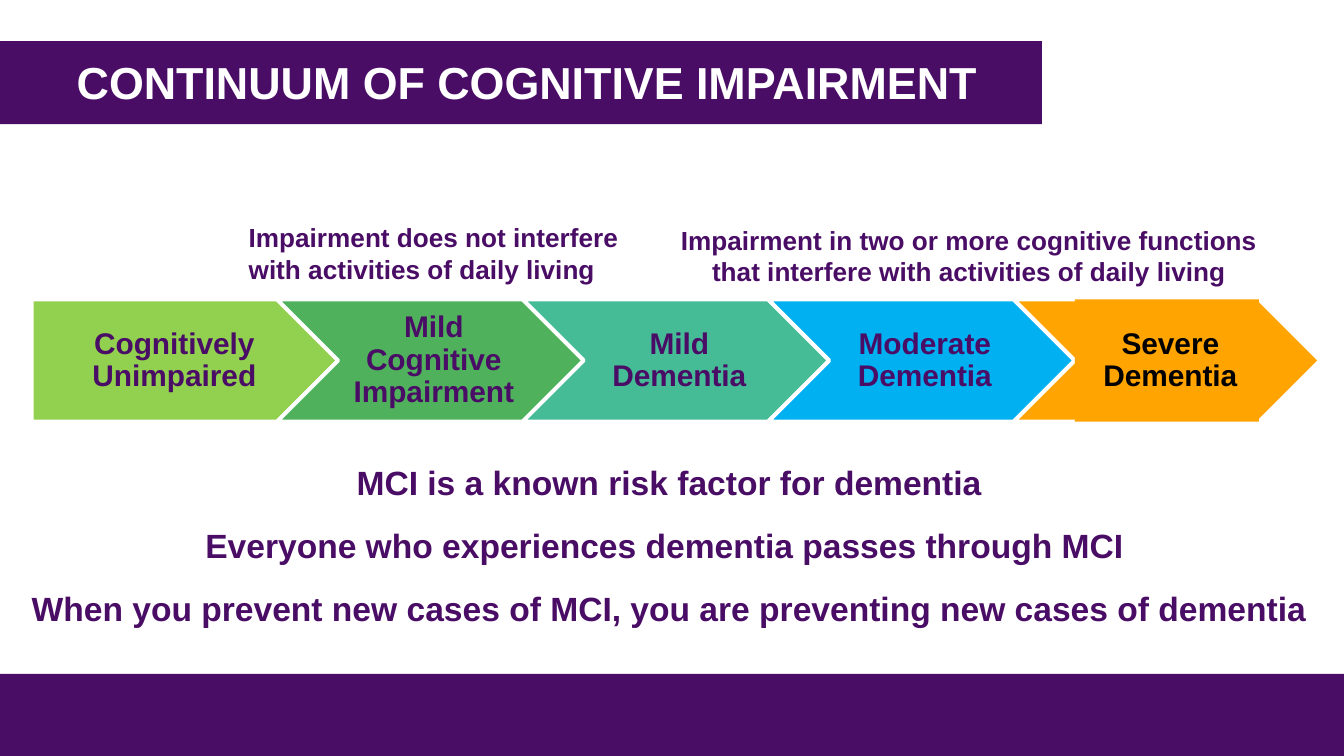
from pptx import Presentation
from pptx.dml.color import RGBColor
from pptx.enum import shapes, text
from pptx.util import Cm, Pt

PURPLE = RGBColor(0x4A, 0x0D, 0x66)
WHITE = RGBColor(0xFF, 0xFF, 0xFF)
BLACK = RGBColor(0x00, 0x00, 0x00)
LIME = RGBColor(0x92, 0xD0, 0x50)
GREEN = RGBColor(0x4F, 0xB1, 0x5B)
TEAL = RGBColor(0x45, 0xBB, 0x96)
BLUE = RGBColor(0x00, 0xB0, 0xF0)
ORANGE = RGBColor(0xFF, 0xA4, 0x00)

STAGES = [
    ("Cognitively Unimpaired", LIME),
    ("Mild Cognitive Impairment", GREEN),
    ("Mild Dementia", TEAL),
    ("Moderate Dementia", BLUE),
    ("Severe Dementia", ORANGE),
]
MESSAGES = [
    "MCI is a known risk factor for dementia",
    "Everyone who experiences dementia passes through MCI ",
    "When you prevent new cases of MCI, you are preventing new cases of dementia",
]

# Stage geometry, in centimetres
STAGE_LEFT, STAGE_TOP, STAGE_STEP = 0.6, 5.66, 4.64
STAGE_WIDTH, STAGE_HEIGHT = 5.79, 2.31
POINT = STAGE_HEIGHT / 2


def add_block(slide, kind, box, fill, outline=None):
    """Add a filled preset shape, with an outline only when a colour is given."""
    block = slide.shapes.add_shape(kind, *map(Cm, box))
    block.shadow.inherit = False
    block.fill.solid()
    block.fill.fore_color.rgb = fill
    if outline is None:
        block.line.fill.background()
    else:
        block.line.color.rgb = outline
        block.line.width = Pt(2)
    return block


def add_text(slide, box, lines, *, size, color=PURPLE, align=text.PP_ALIGN.CENTER,
             anchor=text.MSO_ANCHOR.TOP, insets=(0.25, 0.13, 0.25, 0.13),
             line_spacing=None, gap=0, fill=None):
    """Add a wrapped box of bold text with one paragraph per line."""
    label = slide.shapes.add_textbox(*map(Cm, box))
    if fill is not None:
        label.fill.solid()
        label.fill.fore_color.rgb = fill
    frame = label.text_frame
    frame.word_wrap = True
    frame.vertical_anchor = anchor
    (frame.margin_left, frame.margin_top,
     frame.margin_right, frame.margin_bottom) = map(Cm, insets)
    for index, line in enumerate(lines):
        paragraph = frame.add_paragraph() if index else frame.paragraphs[0]
        paragraph.alignment = align
        if line_spacing:
            paragraph.line_spacing = line_spacing
        if index and gap:
            paragraph.space_before = Pt(gap)
        run = paragraph.add_run()
        run.text = line
        run.font.name = "Arial"
        run.font.size = Pt(size)
        run.font.bold = True
        run.font.color.rgb = color


def add_stage(slide, index, name, fill):
    """Add one arrow of the continuum with its label."""
    first, last = index == 0, index == len(STAGES) - 1
    left = STAGE_LEFT + index * STAGE_STEP
    kind = shapes.MSO_SHAPE.PENTAGON if first else shapes.MSO_SHAPE.CHEVRON
    add_block(slide, kind, (left, STAGE_TOP, STAGE_WIDTH, STAGE_HEIGHT), fill, WHITE)

    # The label fills the flat part of the arrow
    label_left = left if first else left + POINT
    label_width = STAGE_WIDTH - (POINT / 2 if first else 2 * POINT)
    add_text(slide, (label_left, STAGE_TOP, label_width, STAGE_HEIGHT), [name],
             size=16, color=BLACK if last else PURPLE,
             anchor=text.MSO_ANCHOR.MIDDLE, line_spacing=0.9,
             insets=(0.23 if first else 0.18, 0.13, 0.05, 0.13),
             fill=fill if last else None)


def main():
    deck = Presentation()
    deck.slide_width, deck.slide_height = Cm(25.4), Cm(14.29)
    slide = deck.slides.add_slide(deck.slide_layouts[6])

    # Footer band
    add_block(slide, shapes.MSO_SHAPE.RECTANGLE, (0, 12.74, 25.4, 1.55), PURPLE)

    # Continuum of stages
    for index, (name, fill) in enumerate(STAGES):
        add_stage(slide, index, name, fill)

    # Key messages
    add_text(slide, (0.13, 8.61, 25.04, 3.43), MESSAGES, size=18, gap=12)

    # Notes above the stages
    add_text(slide, (4.45, 4.06, 7.72, 1.45),
             ["Impairment does not interfere with activities of daily living"],
             size=14, align=text.PP_ALIGN.LEFT)
    add_text(slide, (12.5, 4.11, 11.63, 1.45),
             ["Impairment in two or more cognitive functions that interfere "
              "with activities of daily living"], size=14)

    # Title band
    add_block(slide, shapes.MSO_SHAPE.RECTANGLE, (0, 0.78, 19.69, 1.57), PURPLE)
    add_text(slide, (1.45, 1.04, 17.17, 1.02), ["CONTINUUM OF COGNITIVE IMPAIRMENT"],
             size=24, color=WHITE, align=text.PP_ALIGN.LEFT,
             anchor=text.MSO_ANCHOR.BOTTOM, insets=(0, 0, 0, 0))

    deck.save("out.pptx")


if __name__ == "__main__":
    main()
